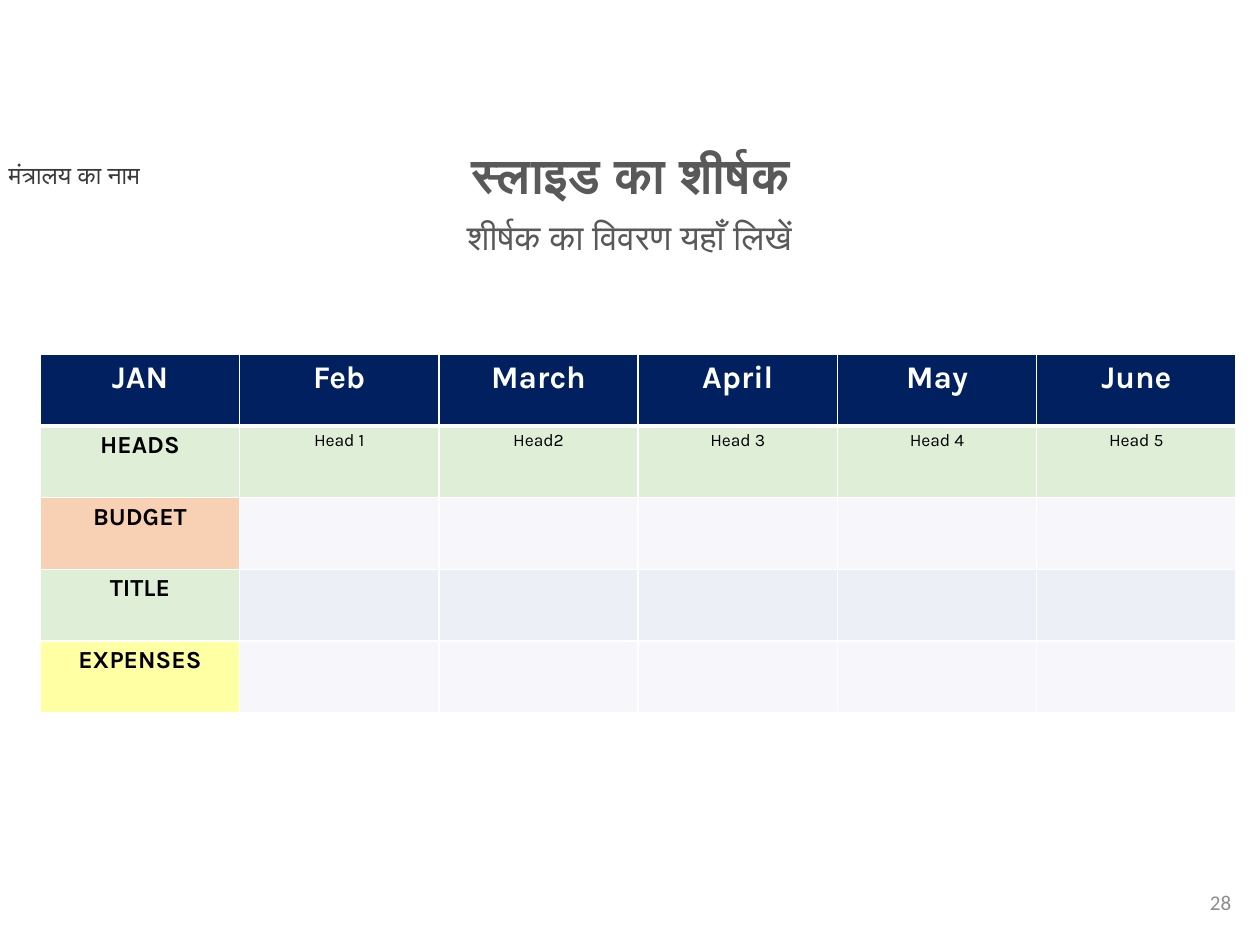
from lxml.etree import SubElement
from pptx import Presentation
from pptx.dml.color import RGBColor
from pptx.enum.text import MSO_ANCHOR, PP_ALIGN
from pptx.oxml import parse_xml
from pptx.oxml.ns import nsdecls, qn
from pptx.util import Inches, Pt

COLORS = {
    "white": "FFFFFF",
    "black": "000000",
    "navy": "002060",
    "green": "A9D18E",
    "orange": "ED7D31",
    "yellow": "FFFF00",
    "light band": "E9EBF5",
    "dark band": "CFD5EA",
    "ministry": "3B3838",
    "heading": "595959",
    "number": "8C8C8C",
}
MONTHS = ["JAN", "Feb", "March", "April", "May", "June"]
HEADS = ["Head 1", "Head2", "Head 3", "Head 4", "Head 5"]
EMPTY = [""] * len(HEADS)
BODY_ROWS = [
    ("HEADS", "green", HEADS, "green"),
    ("BUDGET", "orange", EMPTY, "light band"),
    ("TITLE", "green", EMPTY, "dark band"),
    ("EXPENSES", "yellow", EMPTY, "light band"),
]


class SlideBuilder:
    text_font = "Calibri"
    table_font = "Karla"
    tint = 36

    def __init__(self, slide):
        self.slide = slide

    def add_span(self, para, text, font, size, color, bold=False):
        span = para.add_run()
        span.text = text
        span.font.name = font
        span.font.size = Pt(size)
        span.font.bold = bold
        span.font.color.rgb = RGBColor.from_string(COLORS[color])

    def add_text(self, text, left, top, width, height, size, color,
                 align=PP_ALIGN.LEFT, anchor=MSO_ANCHOR.TOP, bold=False, spacing=None):
        box = self.slide.shapes.add_textbox(
            Inches(left), Inches(top), Inches(width), Inches(height))
        frame = box.text_frame
        frame.word_wrap = True
        frame.vertical_anchor = anchor
        para = frame.paragraphs[0]
        para.alignment = align
        para.line_spacing = spacing
        self.add_span(para, text, self.text_font, size, color, bold)

    def add_grid(self, left, top, width, height, rows, columns):
        frame = self.slide.shapes.add_table(
            rows, columns, Inches(left), Inches(top), Inches(width), Inches(height))
        return frame.table

    def add_borders(self, cell, top_width, bottom_width):
        properties = cell._tc.get_or_add_tcPr()
        widths = {"lnL": 1, "lnR": 1, "lnT": top_width, "lnB": bottom_width}
        for index, (side, width) in enumerate(widths.items()):
            properties.insert(index, parse_xml(
                f'<a:{side} {nsdecls("a")} w="{Pt(width)}"><a:solidFill>'
                f'<a:srgbClr val="{COLORS["white"]}"/></a:solidFill></a:{side}>'))

    def fill_cell(self, cell, text, fill, size, color="black", bold=False,
                  tinted=True, top_width=1, bottom_width=1):
        cell.margin_left = cell.margin_right = Inches(0.07)
        cell.margin_top = cell.margin_bottom = Inches(0.04)
        cell.fill.solid()
        cell.fill.fore_color.rgb = RGBColor.from_string(COLORS[fill])
        if tinted:
            shade = cell._tc.tcPr.find(qn("a:solidFill")).find(qn("a:srgbClr"))
            SubElement(shade, qn("a:alpha")).set("val", str(self.tint * 1000))
        self.add_borders(cell, top_width, bottom_width)
        if text:
            para = cell.text_frame.paragraphs[0]
            para.alignment = PP_ALIGN.CENTER
            self.add_span(para, text, self.table_font, size, color, bold)


def main():
    deck = Presentation()
    deck.slide_width = Inches(10)
    deck.slide_height = Inches(7.5)
    page = SlideBuilder(deck.slides.add_slide(deck.slide_layouts[6]))

    page.add_text("मंत्रालय का नाम", -0.03, 1.22, 2.18, 0.34, 14, "ministry")

    table = page.add_grid(0.32, 2.81, 9.49, 2.85, len(BODY_ROWS) + 1, len(MONTHS))
    for column, month in enumerate(MONTHS):
        page.fill_cell(table.cell(0, column), month, "navy", 18, "white",
                       bold=True, tinted=False, bottom_width=3)
    for row, (label, label_fill, values, value_fill) in enumerate(BODY_ROWS, 1):
        top_width = 3 if row == 1 else 1
        page.fill_cell(table.cell(row, 0), label, label_fill, 14,
                       bold=True, top_width=top_width)
        for column, value in enumerate(values, 1):
            page.fill_cell(table.cell(row, column), value, value_fill, 10,
                           top_width=top_width)

    page.add_text("28", 7.62, 6.96, 2.25, 0.4, 12, "number",
                  PP_ALIGN.RIGHT, MSO_ANCHOR.MIDDLE)
    page.add_text("शीर्षक का विवरण यहाँ लिखें", 1.46, 1.7, 7.07, 0.63, 20, "heading",
                  PP_ALIGN.CENTER, spacing=0.9)
    page.add_text("स्लाइड का शीर्षक", 1.86, 1.15, 6.29, 0.47, 28, "heading",
                  PP_ALIGN.CENTER, bold=True, spacing=0.9)

    deck.save("out.pptx")


if __name__ == "__main__":
    main()
